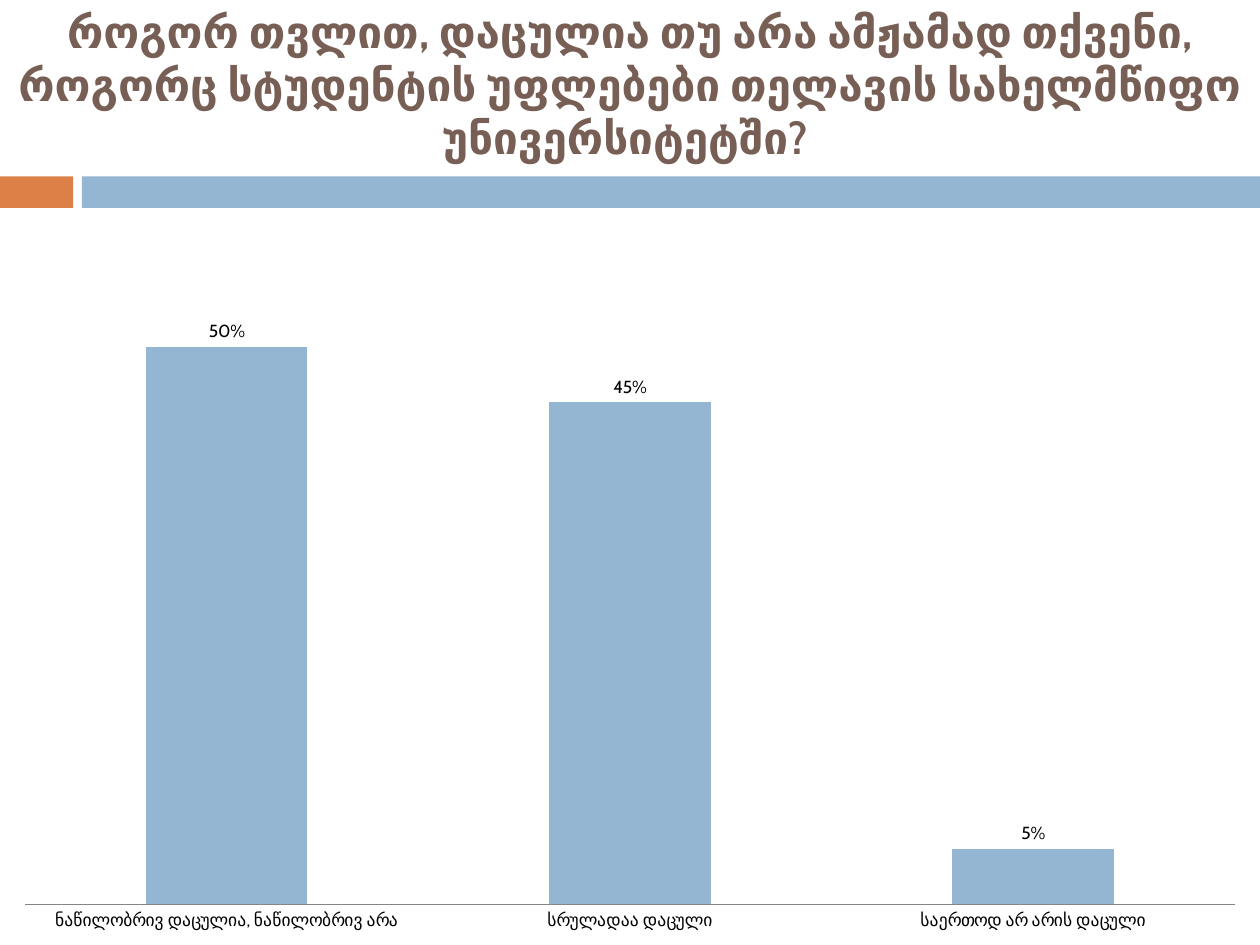
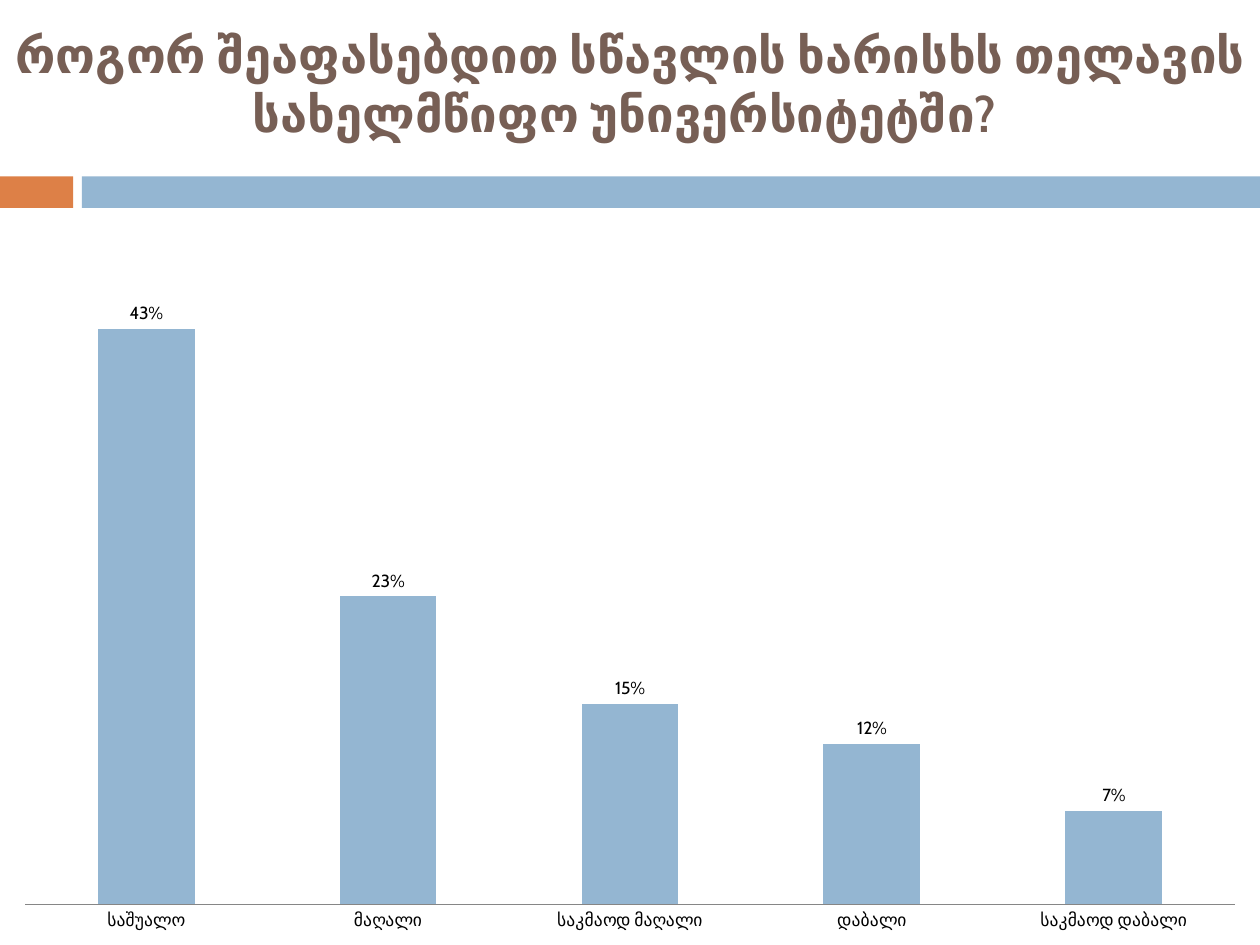
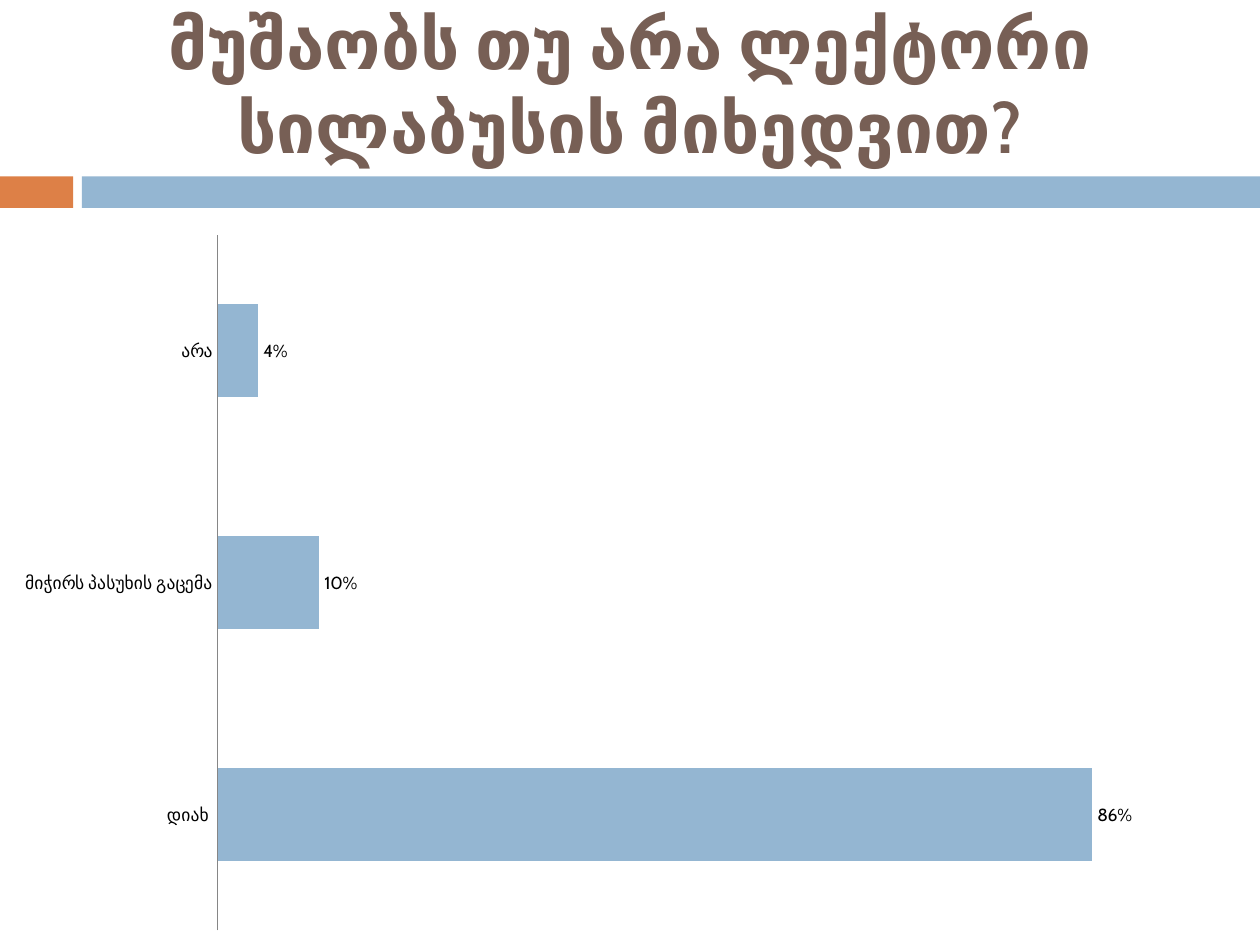
from pptx import Presentation
from pptx.chart.data import CategoryChartData
from pptx.dml.color import RGBColor
from pptx.enum.chart import XL_CHART_TYPE as ChartType, XL_LABEL_POSITION as LabelPosition
from pptx.enum.chart import XL_TICK_LABEL_POSITION as TickLabels, XL_TICK_MARK as TickMark
from pptx.enum.shapes import MSO_SHAPE as Shape
from pptx.enum.text import MSO_ANCHOR as Anchor, PP_ALIGN as Align
from pptx.util import Inches, Pt

BLUE = RGBColor(0x94, 0xB6, 0xD2)
ORANGE = RGBColor(0xDD, 0x80, 0x47)
BROWN = RGBColor(0x77, 0x5F, 0x55)
BLACK = RGBColor(0, 0, 0)
GRAY = RGBColor(0x86, 0x86, 0x86)
FONT = "Cabin"

WIDTH, HEIGHT = 10, 7.5
TITLE_HEIGHT = 1.33
BAND_TOP, BAND_HEIGHT = 1.4, 0.25
BANDS = [(0, 0.58, ORANGE), (0.65, WIDTH, BLUE)]
CHART_TOP = 1.75

SLIDES = [
    {
        "title": "როგორ თვლით, დაცულია თუ არა ამჟამად თქვენი, როგორც სტუდენტის "
                 "უფლებები თელავის სახელმწიფო უნივერსიტეტში? ",
        "size": 25.2,
        "kind": ChartType.COLUMN_CLUSTERED,
        "answers": {"ნაწილობრივ დაცულია, ნაწილობრივ არა": 0.5,
                    "სრულადაა დაცული": 0.45,
                    "საერთოდ არ არის დაცული": 0.05},
        "top_value": 0.6,
    },
    {
        "title": "როგორ შეაფასებდით სწავლის ხარისხს თელავის სახელმწიფო უნივერსიტეტში? ",
        "size": 28,
        "kind": ChartType.COLUMN_CLUSTERED,
        "answers": {"საშუალო": 0.43, "მაღალი": 0.23, "საკმაოდ მაღალი": 0.15,
                    "დაბალი": 0.12, "საკმაოდ დაბალი": 0.07},
        "top_value": 0.5,
    },
    {
        "title": "მუშაობს თუ არა ლექტორი სილაბუსის მიხედვით?",
        "size": 39.6,
        "kind": ChartType.BAR_CLUSTERED,
        "answers": {"დიახ ": 0.86, "მიჭირს პასუხის გაცემა": 0.1, "არა": 0.04},
        "top_value": 1,
    },
]


def style_font(font, size, color, bold=False):
    font.name = FONT
    font.size = Pt(size)
    font.bold = bold
    font.color.rgb = color


def add_bands(page):
    for left, right, color in BANDS:
        band = page.shapes.add_shape(Shape.RECTANGLE, Inches(left), Inches(BAND_TOP),
                                     Inches(right - left), Inches(BAND_HEIGHT))
        band.shadow.inherit = False
        band.fill.solid()
        band.fill.fore_color.rgb = color
        band.line.fill.background()


def add_title(page, text, size, color=BROWN, bold=True):
    box = page.shapes.add_textbox(0, 0, Inches(WIDTH), Inches(TITLE_HEIGHT))
    frame = box.text_frame
    frame.word_wrap = True
    frame.vertical_anchor = Anchor.MIDDLE
    para = frame.paragraphs[0]
    para.alignment = Align.CENTER
    span = para.add_run()
    span.text = text
    style_font(span.font, size, color, bold)


def add_answers(page, kind, answers, top_value):
    data = CategoryChartData(number_format="0%")
    data.categories = list(answers)
    data.add_series("Series 1", list(answers.values()))
    chart = page.shapes.add_chart(kind, 0, Inches(CHART_TOP), Inches(WIDTH),
                                  Inches(HEIGHT - CHART_TOP), data).chart
    chart.has_title = False
    chart.has_legend = False
    style_font(chart.font, 10, BLACK)

    category_axis = chart.category_axis
    category_axis.major_tick_mark = TickMark.NONE
    category_axis.tick_label_position = TickLabels.NEXT_TO_AXIS
    category_axis.format.line.color.rgb = GRAY
    category_axis.format.line.width = Pt(0.75)

    value_axis = chart.value_axis
    value_axis.visible = False
    value_axis.has_major_gridlines = False
    value_axis.minimum_scale = 0
    value_axis.maximum_scale = top_value

    plot = chart.plots[0]
    plot.vary_by_categories = False
    plot.gap_width = 150
    plot.overlap = -25
    plot.has_data_labels = True
    labels = plot.data_labels
    labels.show_value = True
    labels.number_format = "0%"
    labels.number_format_is_linked = False
    labels.position = LabelPosition.OUTSIDE_END
    style_font(labels.font, 10, BLACK)

    bars = plot.series[0]
    bars.format.fill.solid()
    bars.format.fill.fore_color.rgb = BLUE


def main():
    deck = Presentation()
    deck.slide_width, deck.slide_height = Inches(WIDTH), Inches(HEIGHT)
    for content in SLIDES:
        page = deck.slides.add_slide(deck.slide_layouts[6])
        add_bands(page)
        add_title(page, content["title"], content["size"])
        add_answers(page, content["kind"], content["answers"], content["top_value"])
    deck.save("out.pptx")


if __name__ == "__main__":
    main()
